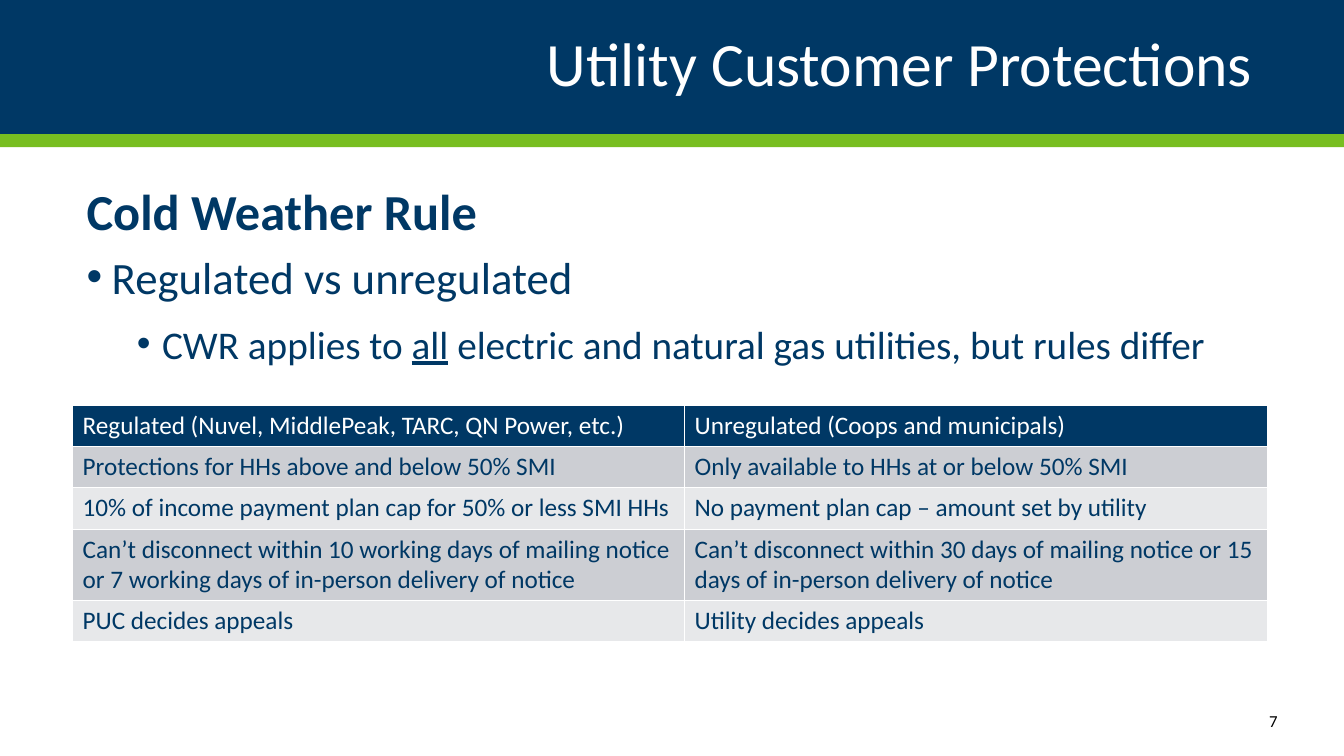
import pptx
import pptx.util
import pptx.dml.color
import pptx.enum.shapes
import pptx.enum.text
import pptx.oxml
import pptx.oxml.ns

Inches = pptx.util.Inches
Pt = pptx.util.Pt
RGBColor = pptx.dml.color.RGBColor
ALIGN = pptx.enum.text.PP_ALIGN
ANCHOR = pptx.enum.text.MSO_ANCHOR

NAVY = RGBColor(0x00, 0x38, 0x65)
GREEN = RGBColor(0x78, 0xBE, 0x21)
WHITE = RGBColor(0xFF, 0xFF, 0xFF)
BLACK = RGBColor(0x00, 0x00, 0x00)
BAND_DARK = RGBColor(0xCC, 0xCE, 0xD3)
BAND_LIGHT = RGBColor(0xE7, 0xE8, 0xEA)
NS = pptx.oxml.ns.nsdecls("a")


def add_text(p, text, size=18, color=NAVY, bold=False, underline=False, align=None):
    r = p.add_run()
    r.text = text
    r.font.name = "Calibri"
    r.font.size = Pt(size)
    r.font.color.rgb = color
    r.font.bold = bold
    r.font.underline = underline
    if align is not None:
        p.alignment = align


prs = pptx.Presentation()
prs.slide_width = Inches(13.33)
prs.slide_height = Inches(7.5)
s = prs.slides.add_slide(prs.slide_layouts[5])

bar = s.shapes.add_shape(pptx.enum.shapes.MSO_SHAPE.RECTANGLE,
                         Inches(0), Inches(1.33), Inches(13.33), Inches(0.13))
bar.shadow.inherit = False
bar.fill.solid()
bar.fill.fore_color.rgb = GREEN
bar.line.fill.background()

title = s.shapes.title
title.left, title.top = Inches(0), Inches(0)
title.width, title.height = Inches(13.33), Inches(1.33)
title.fill.solid()
title.fill.fore_color.rgb = NAVY
tf = title.text_frame
tf.auto_size = pptx.enum.text.MSO_AUTO_SIZE.NONE
tf.vertical_anchor = ANCHOR.MIDDLE
tf.margin_left = tf.margin_right = Inches(0.9)
tf.paragraphs[0].line_spacing = 0.9
add_text(tf.paragraphs[0], "Utility Customer Protections", size=44, color=WHITE, align=ALIGN.RIGHT)

body = s.shapes.add_textbox(Inches(0.76), Inches(1.74), Inches(11.85), Inches(5.01))
body.fill.solid()
body.fill.fore_color.rgb = WHITE
tf = body.text_frame
tf.word_wrap = True
add_text(tf.paragraphs[0], "Cold Weather Rule", size=36, bold=True)

bullets = [
    (0, 32, ["Regulated vs unregulated"]),
    (1, 28, ["CWR applies to ", "all", " electric and natural gas utilities, but rules differ"]),
]
for level, size, parts in bullets:
    p = tf.add_paragraph()
    p.level = level
    p.space_before = p.space_after = Pt(6)
    for part in parts:
        add_text(p, part, size=size, underline=part == "all")
    pPr = p._p.get_or_add_pPr()
    pPr.set("marL", str(Inches(0.25 + 0.5 * level)))
    pPr.set("indent", str(Inches(-0.25)))
    for xml in (f'<a:buClr {NS}><a:srgbClr val="{NAVY}"/></a:buClr>',
                f'<a:buFont {NS} typeface="Arial"/>',
                f'<a:buChar {NS} char="•"/>'):
        pPr.append(pptx.oxml.parse_xml(xml))

number = s.shapes.add_textbox(Inches(11.17), Inches(6.95), Inches(1.6), Inches(0.4))
tf = number.text_frame
tf.word_wrap = True
tf.vertical_anchor = ANCHOR.MIDDLE
add_text(tf.paragraphs[0], "7", size=12, color=BLACK, align=ALIGN.RIGHT)

rules = [
    ("Regulated (Nuvel, MiddlePeak, TARC, QN Power, etc.)", "Unregulated (Coops and municipals)"),
    ("Protections for HHs above and below 50% SMI", "Only available to HHs at or below 50% SMI"),
    ("10% of income payment plan cap for 50% or less SMI HHs",
     "No payment plan cap – amount set by utility"),
    ("Can’t disconnect within 10 working days of mailing notice or 7 working days "
     "of in-person delivery of notice",
     "Can’t disconnect within 30 days of mailing notice or 15 days of in-person delivery of notice"),
    ("PUC decides appeals", "Utility decides appeals"),
]
heights = [0.41, 0.41, 0.41, 0.71, 0.41]
table = s.shapes.add_table(len(rules), 2, Inches(0.72), Inches(4.02),
                           Inches(11.85), Inches(sum(heights))).table
for column, width in zip(table.columns, (6.07, 5.78)):
    column.width = Inches(width)
for i, (row, height, texts) in enumerate(zip(table.rows, heights, rules)):
    row.height = Inches(height)
    fill = NAVY if i == 0 else BAND_DARK if i % 2 else BAND_LIGHT
    for cell, text in zip(row.cells, texts):
        add_text(cell.text_frame.paragraphs[0], text, color=WHITE if i == 0 else NAVY)
        tcPr = cell._tc.get_or_add_tcPr()
        for side in "LRTB":
            tcPr.append(pptx.oxml.parse_xml(
                f'<a:ln{side} {NS} w="{Pt(1)}"><a:solidFill><a:srgbClr val="{WHITE}"/>'
                f'</a:solidFill></a:ln{side}>'))
        cell.fill.solid()
        cell.fill.fore_color.rgb = fill

prs.save("out.pptx")
